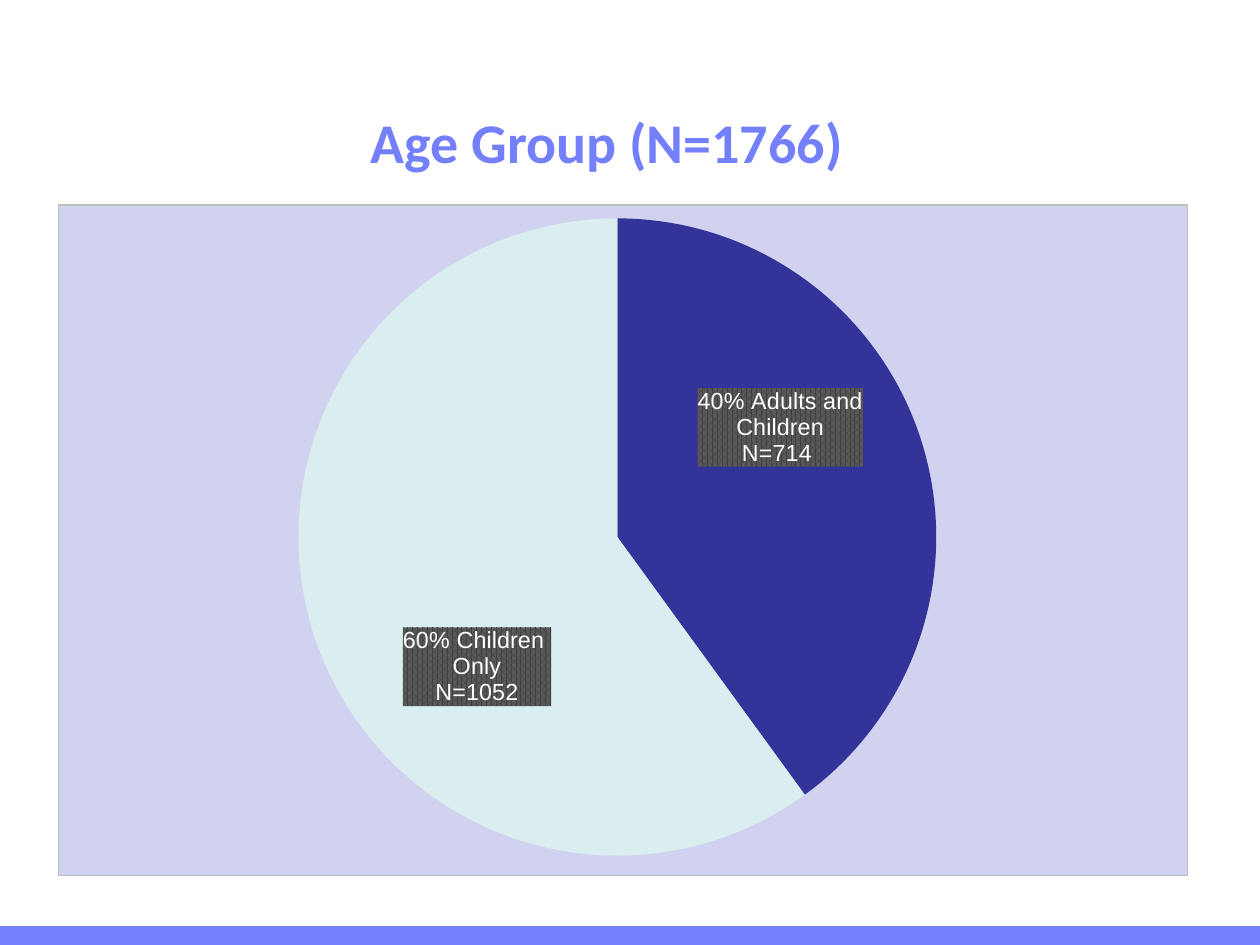
import dataclasses
import pptx
import pptx.chart.data
import pptx.dml.color
import pptx.enum.chart
import pptx.enum.shapes
import pptx.enum.text
import pptx.oxml
import pptx.oxml.ns
import pptx.util

Cm = pptx.util.Cm
Pt = pptx.util.Pt
Color = pptx.dml.color.RGBColor.from_string
Align = pptx.enum.text.PP_ALIGN


@dataclasses.dataclass
class Theme:
    blue: str = "7480FB"
    panel: str = "D1D1F0"
    edge: str = "BFBFBF"
    navy: str = "333399"
    mint: str = "DAEDEF"
    white: str = "FFFFFF"
    black: str = "000000"
    dark: str = "404040"
    gray: str = "595959"
    head: float = 32
    label: float = 13.3
    base: float = 10


theme = Theme()


def write(frame, text, size, color, font, bold=False):
    frame.text = text
    for para in frame.paragraphs:
        para.alignment = Align.CENTER
        for run in para.runs:
            run.font.size = Pt(size)
            run.font.name = font
            run.font.bold = bold
            run.font.color.rgb = Color(color)


def make(tag, body):
    names = pptx.oxml.ns.nsdecls("c", "a")
    return pptx.oxml.parse_xml(f"<c:{tag} {names}>{body}</c:{tag}>")


deck = pptx.Presentation()
deck.slide_width = Cm(25.4)
deck.slide_height = Cm(19.05)
slide = deck.slides.add_slide(deck.slide_layouts[5])

bar = slide.shapes.add_shape(
    pptx.enum.shapes.MSO_SHAPE.RECTANGLE, 0, Cm(18.67), Cm(25.4), Cm(0.38))
bar.shadow.inherit = False
bar.fill.solid()
bar.fill.fore_color.rgb = Color(theme.blue)
bar.line.fill.background()

title = slide.shapes.title
title.left, title.top = Cm(4.06), Cm(1.54)
title.width, title.height = Cm(16.87), Cm(2.62)
title.text_frame.vertical_anchor = pptx.enum.text.MSO_ANCHOR.MIDDLE
title.text_frame.margin_right = Cm(0.77)
write(title.text_frame, "Age Group (N=1766)", size=theme.head,
      color=theme.blue, font="Calibri", bold=True)

data = pptx.chart.data.CategoryChartData(number_format="0%")
data.categories = ["1", "2"]
data.add_series("Series 1", [0.4, 0.6])
chart = slide.shapes.add_chart(
    pptx.enum.chart.XL_CHART_TYPE.PIE,
    Cm(1.17), Cm(4.12), Cm(22.78), Cm(13.55), data).chart
chart.has_legend = False
chart.has_title = False
chart.font.name = "Arial"
chart.font.size = Pt(theme.base)
chart.font.color.rgb = Color(theme.black)
plot = chart.plots[0]
plot.vary_by_categories = True
series = plot.series[0]

tags = series.data_labels
tags.show_value = True
tags.show_percentage = False
tags.show_category_name = False
tags.number_format = "0%"
tags.number_format_is_linked = False
tags.font.name = "Arial"
tags.font.size = Pt(theme.label)
tags.font.bold = True
tags.font.color.rgb = Color(theme.white)

root = chart._chartSpace
groups = [
    (theme.navy, "40% Adults and Children\nN=714 ", 0.01, -0.09),
    (theme.mint, "60% Children \nOnly\nN=1052", 0.01, 0.12),
]
for spot, (color, text, x, y) in enumerate(groups):
    point = series.points[spot]
    point.format.fill.solid()
    point.format.fill.fore_color.rgb = Color(color)
    point.format.line.fill.background()
    label = point.data_label
    write(label.text_frame, text, size=theme.label,
          color=theme.white, font="Arial")
    label.position = pptx.enum.chart.XL_LABEL_POSITION.CENTER
    node = root.xpath(".//c:dLbl")[spot]
    node.xpath("c:idx")[0].addnext(make(
        "layout", f'<c:manualLayout><c:x val="{x}"/><c:y val="{y}"/>'
        "</c:manualLayout>"))
    node.xpath("c:tx")[0].addnext(make(
        "spPr", '<a:pattFill prst="pct75">'
        f'<a:fgClr><a:srgbClr val="{theme.dark}"/></a:fgClr>'
        f'<a:bgClr><a:srgbClr val="{theme.gray}"/></a:bgClr></a:pattFill>'))

root.xpath("c:chart")[0].addnext(make(
    "spPr", f'<a:solidFill><a:srgbClr val="{theme.panel}"/></a:solidFill>'
    f'<a:ln w="{Pt(0.75)}"><a:solidFill><a:srgbClr val="{theme.edge}"/>'
    "</a:solidFill></a:ln>"))
area = root.xpath(".//c:plotArea")[0]
for old in area.xpath("c:layout"):
    area.remove(old)
sides = {"x": 0.21, "y": 0.02, "w": 0.57, "h": 0.95}
area.insert(0, make(
    "layout", '<c:manualLayout><c:layoutTarget val="inner"/>'
    '<c:xMode val="edge"/><c:yMode val="edge"/>'
    + "".join(f'<c:{key} val="{val}"/>' for key, val in sides.items())
    + "</c:manualLayout>"))

deck.save("out.pptx")
